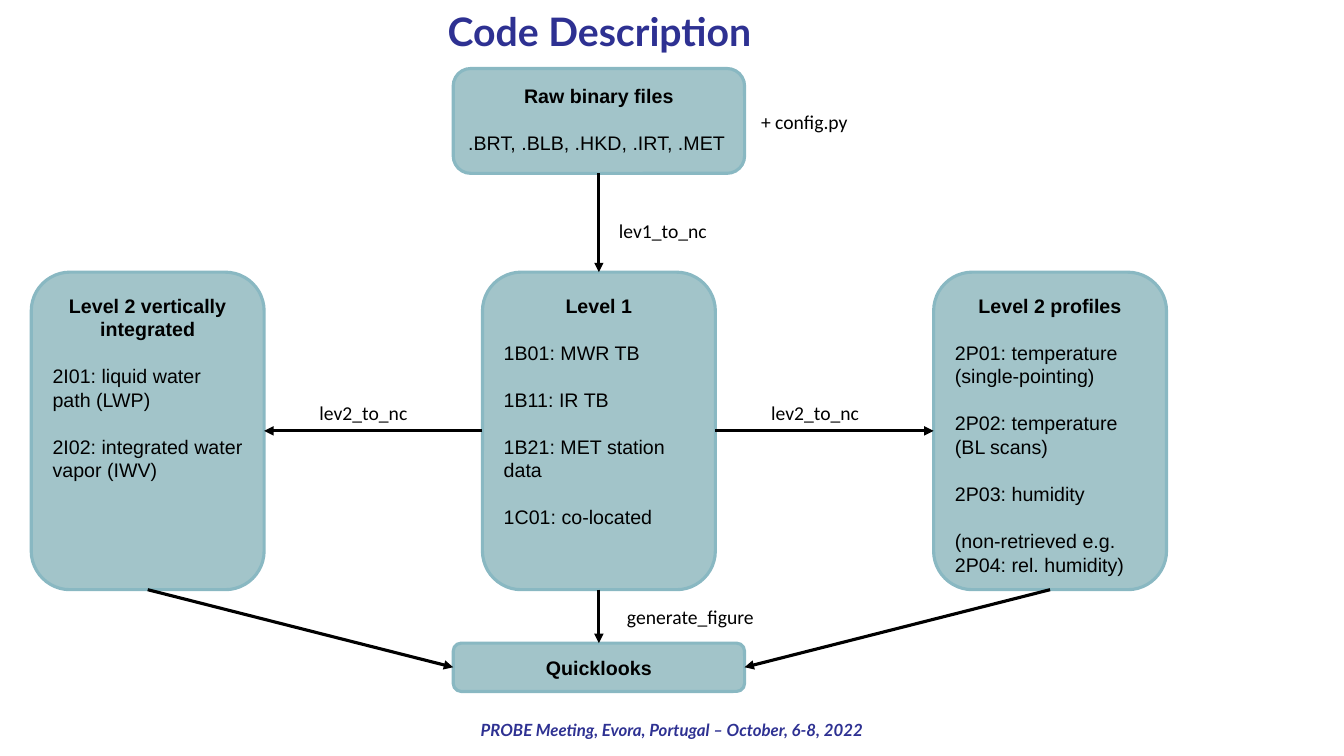
from dataclasses import dataclass

from lxml.etree import SubElement
from pptx import Presentation
from pptx.dml.color import RGBColor
from pptx.enum.shapes import MSO_CONNECTOR, MSO_SHAPE
from pptx.enum.text import MSO_ANCHOR, PP_ALIGN
from pptx.oxml.ns import qn
from pptx.util import Inches, Pt


@dataclass(frozen=True)
class Theme:
    navy = RGBColor.from_string("2E3192")
    black = RGBColor.from_string("000000")
    fill = RGBColor.from_string("A2C4C9")
    border = RGBColor.from_string("89B8C2")
    stroke = Pt(2.25)
    title = {"name": "Lato", "size": Pt(28), "bold": True}
    footer = {"name": "Lato", "size": Pt(12), "bold": True, "italic": True}
    head = {"name": "Arial", "size": Pt(14), "bold": True}
    item = {"name": "Arial", "size": Pt(14), "bold": False}
    label = {"name": "Calibri", "size": Pt(14)}
    item_gap = Pt(16.8)


T = Theme()


def write(p, text, fmt, color=T.black, align=PP_ALIGN.LEFT):
    p.alignment = align
    r = p.add_run()
    r.text = text
    for name, value in fmt.items():
        setattr(r.font, name, value)
    r.font.color.rgb = color


def set_frame(tf, margin_y=0.1, anchor=MSO_ANCHOR.TOP):
    """Wrap the text and set its insets; return the first paragraph."""
    tf.word_wrap = True
    tf.vertical_anchor = anchor
    tf.margin_left = tf.margin_right = Inches(0.1)
    tf.margin_top = tf.margin_bottom = Inches(margin_y)
    return tf.paragraphs[0]


prs = Presentation()
prs.slide_width, prs.slide_height = Inches(13.33), Inches(7.5)
s = prs.slides.add_slide(prs.slide_layouts[5])

# Title and footer
title = s.shapes.title
title.left, title.top, title.width, title.height = map(Inches, (0.31, 0, 11.27, 0.68))
p = set_frame(title.text_frame, 0.05, MSO_ANCHOR.MIDDLE)
p.line_spacing = 0.9
write(p, "Code Description", T.title, T.navy, PP_ALIGN.CENTER)

footer = s.shapes.add_textbox(0, Inches(7.04), prs.slide_width, Inches(0.46))
p = set_frame(footer.text_frame, 0.05)
p.line_spacing = 1.25
write(p, "PROBE Meeting, Evora, Portugal – October, 6-8, 2022", T.footer, T.navy, PP_ALIGN.CENTER)

# Boxes: centre x, top, width, height, heading, items
AXIS, COLUMN_STEP = 5.94, 4.475
LEVEL = (2.7, 2.31, 3.15)
boxes = {
    "integrated": (AXIS - COLUMN_STEP, *LEVEL, "Level 2 vertically integrated", [
        "2I01: liquid water path (LWP)",
        "2I02: integrated water vapor (IWV)",
    ]),
    "level1": (AXIS, *LEVEL, "Level 1", [
        "1B01: MWR TB",
        "1B11: IR TB",
        "1B21: MET station data",
        "1C01: co-located",
    ]),
    "profiles": (AXIS + COLUMN_STEP, *LEVEL, "Level 2 profiles", [
        "2P01: temperature (single-pointing)",
        "2P02: temperature (BL scans)",
        "2P03: humidity",
        "(non-retrieved e.g. 2P04: rel. humidity)",
    ]),
    "binary": (AXIS, 0.68, 2.89, 1.04, "Raw binary files", [".BRT, .BLB, .HKD, .IRT, .MET"]),
    "quicklooks": (AXIS, 6.38, 2.89, 0.48, "Quicklooks", []),
}
shapes = {}
for key, (cx, top, width, height, heading, items) in boxes.items():
    sp = s.shapes.add_shape(MSO_SHAPE.ROUNDED_RECTANGLE, Inches(cx - width / 2), Inches(top),
                            Inches(width), Inches(height))
    sp.shadow.inherit = False
    sp.fill.solid()
    sp.fill.fore_color.rgb = T.fill
    sp.line.color.rgb = T.border
    sp.line.width = T.stroke
    tf = sp.text_frame
    write(set_frame(tf), heading, T.head, align=PP_ALIGN.CENTER)
    for item in items:
        p = tf.add_paragraph()
        p.space_before = T.item_gap
        write(p, item, T.item)
    shapes[key] = sp

# Arrows join the middles of box sides
TOP, LEFT, BOTTOM, RIGHT = range(4)
for start, start_side, end, end_side in [
    ("binary", BOTTOM, "level1", TOP),
    ("level1", LEFT, "integrated", RIGHT),
    ("level1", RIGHT, "profiles", LEFT),
    ("level1", BOTTOM, "quicklooks", TOP),
    ("integrated", BOTTOM, "quicklooks", LEFT),
    ("profiles", BOTTOM, "quicklooks", RIGHT),
]:
    arrow = s.shapes.add_connector(MSO_CONNECTOR.STRAIGHT, 0, 0, 0, 0)
    arrow.begin_connect(shapes[start], start_side)
    arrow.end_connect(shapes[end], end_side)
    arrow.line.color.rgb = T.black
    arrow.line.width = T.stroke
    SubElement(arrow.line._get_or_add_ln(), qn("a:tailEnd"), type="triangle")
    SubElement(arrow._element.spPr, qn("a:effectLst"))

# Function and file labels
for text, left, top, width in [
    ("lev1_to_nc", 6.04, 2.07, 1.26),
    ("lev2_to_nc", 3.07, 3.88, 1.26),
    ("lev2_to_nc", 7.55, 3.88, 1.26),
    ("generate_figure", 6.12, 5.9, 1.87),
    ("+ config.py", 7.45, 0.99, 1.26),
]:
    label = s.shapes.add_textbox(*map(Inches, (left, top, width, 0.44)))
    write(set_frame(label.text_frame), text, T.label)

prs.save("out.pptx")
